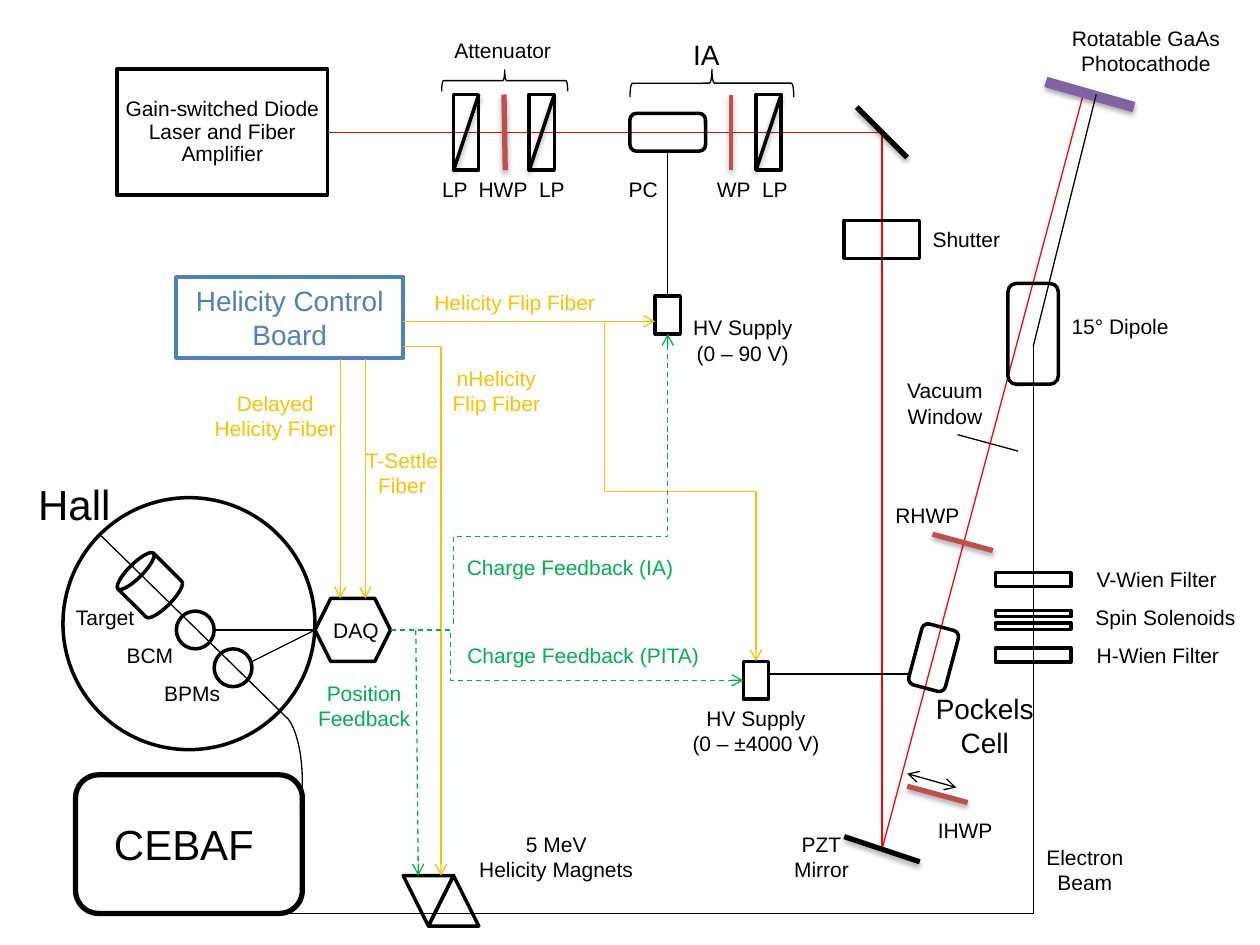
from dataclasses import dataclass

import pptx
import pptx.dml.color
import pptx.enum.dml
import pptx.enum.shapes
import pptx.enum.text
import pptx.oxml
import pptx.oxml.ns
import pptx.util
from pptx.oxml.ns import qn

SHAPE = pptx.enum.shapes.MSO_SHAPE
CONNECTOR = pptx.enum.shapes.MSO_CONNECTOR
UNIT = pptx.util.Cm(2.54)  # one drawing unit; the layout sits on a grid of 0.1


@dataclass(frozen=True)
class Theme:
    font: str = "Arial"
    black: str = "000000"
    laser: str = "FF0000"
    fiber: str = "FFC000"
    feedback: str = "00B050"
    plate: str = "C0504D"
    cathode: str = "8064A2"
    board: str = "4F81BD"
    small: int = 12
    medium: int = 16
    large: int = 24
    thin: float = 0.75
    thick: float = 2
    heavy: float = 3


T = Theme()


def units(*values):
    return [round(v * UNIT) for v in values]


def rgb(color):
    return pptx.dml.color.RGBColor.from_string(color)


def add_xml(parent, xml):
    parent.append(pptx.oxml.parse_xml(xml.replace(">", f" {pptx.oxml.ns.nsdecls('a')}>", 1)))


def set_text(tf, text, size=T.small, color=T.black):
    tf.text = text
    for p in tf.paragraphs:
        p.alignment = pptx.enum.text.PP_ALIGN.CENTER
        p.font.name, p.font.size = T.font, pptx.util.Pt(size)
        p.font.color.rgb = rgb(color)


def add_label(s, text, x, y, width, size=T.small, color=T.black):
    height = 0.1 + (text.count("\n") + 1) * size / 60
    tf = s.shapes.add_textbox(*units(x, y, width, height)).text_frame
    tf.word_wrap = False
    tf.auto_size = pptx.enum.text.MSO_AUTO_SIZE.SHAPE_TO_FIT_TEXT
    set_text(tf, text, size, color)
    return tf


def add_label_row(s, words, x, y, width, stops):
    """Label neighbouring parts in one line, set apart by tab stops."""
    p = add_label(s, "\t".join(words), x, y, width).paragraphs[0]
    p.alignment = pptx.enum.text.PP_ALIGN.LEFT
    tabs = "".join(f'<a:tab pos="{pos}" algn="l"/>' for pos in units(*stops))
    pPr = p._p.get_or_add_pPr()
    add_xml(pPr, f"<a:tabLst>{tabs}</a:tabLst>")
    pPr.insert(0, pPr[-1])


def add_outline(s, kind, x, y, width, height, rotation=0, weight=T.thick, color=T.black):
    sp = s.shapes.add_shape(kind, *units(x, y, width, height))
    sp.shadow.inherit = False
    sp.fill.background()
    sp.line.color.rgb, sp.line.width = rgb(color), pptx.util.Pt(weight)
    sp.rotation = rotation
    return sp


def style_connector(c, color, weight, dashed=False, head=False, tail=False, shadow=False):
    c.line.color.rgb, c.line.width = rgb(color), pptx.util.Pt(weight)
    if dashed:
        c.line.dash_style = pptx.enum.dml.MSO_LINE.DASH
    ln = c.line._get_or_add_ln()
    for name, wanted in (("headEnd", head), ("tailEnd", tail)):
        if wanted:
            add_xml(ln, f'<a:{name} type="arrow"></a:{name}>')
    effect = ('<a:outerShdw blurRad="40000" dist="23000" dir="5400000" rotWithShape="0">'
              '<a:srgbClr val="000000"><a:alpha val="35000"/></a:srgbClr></a:outerShdw>'
              if shadow else "")
    add_xml(c._element.spPr, f"<a:effectLst>{effect}</a:effectLst>")


def add_line(s, x1, y1, x2, y2, color=T.black, weight=T.thin, **style):
    c = s.shapes.add_connector(CONNECTOR.STRAIGHT, *units(x1, y1, x2, y2))
    style_connector(c, color, weight, **style)
    return c


def add_elbow(s, x1, y1, x2, y2, bend, color, upright=False, **style):
    """Three-part arrow; an upright one leaves vertically, so it is a turned level one."""
    turn = 0
    if upright:
        turn = -1 if y2 > y1 else 1
        cx, cy = (x1 + x2) / 2, (y1 + y2) / 2
        dx, dy = turn * (y1 - cy), -turn * (x1 - cx)
        x1, y1, x2, y2 = cx + dx, cy + dy, cx - dx, cy - dy
    c = s.shapes.add_connector(CONNECTOR.ELBOW, *units(x1, y1, x2, y2))
    spPr = c._element.spPr
    if turn:
        spPr.find(qn("a:xfrm")).set("rot", str(turn * 5400000 % 21600000))
    add_xml(spPr.find(qn("a:prstGeom")).find(qn("a:avLst")),
            f'<a:gd name="adj1" fmla="val {round(bend * 100000)}"></a:gd>')
    style_connector(c, color, T.thin, tail=True, **style)


def draw_laser_path(s):
    source = add_outline(s, SHAPE.RECTANGLE, 0.93, 0.55, 1.67, 1)
    tf = source.text_frame
    tf.word_wrap = True
    tf.margin_left = tf.margin_right = tf.margin_top = tf.margin_bottom = units(0.05)[0]
    set_text(tf, "Gain-switched Diode Laser and Fiber Amplifier")
    tf.paragraphs[0].line_spacing = 0.9
    add_line(s, 2.6, 1.05, 7, 1.05, T.laser).begin_connect(source, 3)
    add_line(s, 7, 1.05, 7, 6.74, T.laser)
    add_line(s, 7, 6.74, 8.6, 0.74, T.laser)

    for x in (3.6, 4.2, 6):  # linear polarizers
        add_outline(s, SHAPE.RECTANGLE, x, 0.75, 0.2, 0.6)
        add_line(s, x + 0.2, 0.75, x, 1.35, weight=T.thick, shadow=True)
    for x, y, width, height in ((3.92, 0.14, 0.17, 1), (5.54, 0.01, 0.22, 1.3)):
        add_outline(s, SHAPE.LEFT_BRACE, x, y, width, height, 90, T.thin)
    add_label_row(s, ("LP", "HWP", "LP"), 3.41, 1.35, 1.19, (0.29, 0.77))
    add_label_row(s, ("PC", "WP", "LP"), 4.89, 1.35, 1.48, (0.7, 1.06))

    add_outline(s, SHAPE.RECTANGLE, 6.85, 1.6, 0.3, 0.6, 270)  # shutter
    add_outline(s, SHAPE.ROUNDED_RECTANGLE, 7.26, 4.97, 0.3, 0.5, 15)  # Pockels cell
    for ends in ((6.8, 0.85, 7.2, 1.25), (6.7, 6.64, 7.3, 6.84)):  # mirrors
        add_line(s, *ends, weight=T.heavy, shadow=True)
    for *ends, weight in ((4, 0.75, 4.01, 1.35, T.heavy), (5.8, 0.75, 5.8, 1.35, T.thick),
                          (7.2, 6.24, 7.68, 6.37, T.heavy), (7.4, 4.24, 7.88, 4.37, T.heavy)):
        add_line(s, *ends, T.plate, weight, shadow=True)
    add_line(s, 7.2, 6.14, 7.59, 6.25, head=True, tail=True)
    add_line(s, 7.6, 3.45, 8.08, 3.58)  # vacuum window
    add_line(s, 8.3, 0.65, 9, 0.85, T.cathode, 2 * T.heavy, shadow=True)


def draw_electron_beam(s):
    for ends in ((8.2, 2.75, 8.7, 0.75), (8.2, 2.74, 8.2, 7.25), (2.2, 7.25, 8.2, 7.25)):
        add_line(s, *ends)
    add_outline(s, SHAPE.ROUNDED_RECTANGLE, 8, 2.25, 0.4, 0.8)  # dipole
    for y, height in ((4.6, 0.11), (4.87, 0.05), (4.97, 0.05), (5.2, 0.11)):
        add_outline(s, SHAPE.RECTANGLE, 7.9, y - height / 2, 0.6, height)
    magnet = add_outline(s, SHAPE.ISOSCELES_TRIANGLE, 3.2, 6.95, 0.4, 0.4)
    magnet._element.spPr.find(qn("a:xfrm")).set("flipV", "1")
    add_outline(s, SHAPE.ISOSCELES_TRIANGLE, 3.4, 6.95, 0.4, 0.4)


def draw_hall(s):
    add_outline(s, SHAPE.ROUNDED_RECTANGLE, 0.6, 6.15, 1.8, 1.1, weight=T.heavy)
    arc = add_outline(s, SHAPE.ARC, 2, 5.65, 0.4, 1.1, weight=T.thin)
    arc.adjustments[0], arc.adjustments[1] = 167.4, 29.95
    for x, y, size in ((0.5, 3.95, 2), (1.4, 4.85, 0.3), (1.7, 5.15, 0.3)):
        add_outline(s, SHAPE.OVAL, x, y, size, size)
    target = add_outline(s, SHAPE.CAN, 0.99, 4.43, 0.4, 0.43, 315)
    target.adjustments[0] = 0.28
    add_outline(s, SHAPE.HEXAGON, 2.5, 4.75, 0.6, 0.5)  # DAQ
    for ends in ((2.28, 5.7, 0.79, 4.24), (2, 5.25, 2.5, 5), (1.7, 5, 2.5, 5)):
        add_line(s, *ends)


def draw_controls(s):
    board = add_outline(s, SHAPE.RECTANGLE, 1.4, 2.2, 1.8, 0.64, weight=2.25, color=T.board)
    board.text_frame.word_wrap = True
    set_text(board.text_frame, "Helicity Control Board", T.medium, T.board)
    cell = add_outline(s, SHAPE.ROUNDED_RECTANGLE, 5, 0.9, 0.6, 0.3)
    supply = add_outline(s, SHAPE.RECTANGLE, 5.2, 2.35, 0.2, 0.3)
    add_outline(s, SHAPE.RECTANGLE, 5.9, 5.25, 0.2, 0.3)
    wire = add_line(s, 5.3, 1.2, 5.3, 2.35)
    wire.begin_connect(cell, 2)
    wire.end_connect(supply, 0)
    add_line(s, 6.1, 5.35, 7.21, 5.35)

    add_line(s, 3.2, 2.75, 3.5, 2.75, T.fiber)
    for ends in ((2.7, 2.85, 2.7, 4.75), (2.9, 2.85, 2.9, 4.75),
                 (3.2, 2.55, 5.2, 2.55), (3.5, 2.75, 3.5, 6.95)):
        add_line(s, *ends, T.fiber, tail=True)
    add_elbow(s, 4.8, 2.55, 6, 5.25, 0.5, T.fiber, upright=True)
    add_line(s, 3.3, 5, 3.32, 6.95, T.feedback, dashed=True, tail=True)
    add_elbow(s, 3.1, 5, 5.9, 5.4, 0.17, T.feedback, dashed=True)
    add_elbow(s, 3.6, 4.95, 5.3, 2.65, 0.3, T.feedback, upright=True, dashed=True)


def draw_labels(s):
    groups = {
        (T.small, T.black): (
            ("Attenuator", 3.5, 0.25, 0.98), ("Shutter", 7.3, 1.75, 0.74),
            ("Rotatable GaAs\nPhotocathode", 8.4, 0.15, 1.39),
            ("Vacuum\nWindow", 7.1, 2.95, 0.8), ("15° Dipole", 8.4, 2.44, 0.98),
            ("PZT\nMirror", 6.2, 6.55, 0.64), ("IHWP", 7.34, 6.44, 0.64),
            ("RHWP", 7, 3.94, 0.72), ("HV Supply\n(0 – ±4000 V)", 5.39, 5.55, 1.22),
            ("HV Supply\n(0 – 90 V)", 5.4, 2.45, 0.99), ("Electron\nBeam", 8.2, 6.65, 0.82),
            ("Target", 0.5, 4.75, 0.67), ("BCM", 0.9, 5.05, 0.58), ("BPMs", 1.2, 5.35, 0.65),
            ("5 MeV\nHelicity Magnets", 3.7, 6.55, 1.43), ("DAQ", 2.54, 4.85, 0.57),
            ("V-Wien Filter", 8.6, 4.45, 1.16), ("Spin Solenoids", 8.5, 4.75, 1.5),
            ("H-Wien Filter", 8.6, 5.05, 1.18)),
        (T.small, T.fiber): (
            ("Delayed\nHelicity Fiber", 1.6, 3.05, 1.17), ("T-Settle\nFiber", 2.8, 3.5, 0.78),
            ("Helicity Flip Fiber", 3.34, 2.25, 1.49), ("nHelicity\nFlip Fiber", 3.49, 2.85, 0.9)),
        (T.small, T.feedback): (
            ("Charge Feedback (PITA)", 3.6, 5.05, 2.06), ("Charge Feedback (IA)", 3.6, 4.35, 1.85),
            ("Position\nFeedback", 2.42, 5.35, 0.94)),
        (T.medium, T.black): (("IA", 5.4, 0.25, 0.41), ("Pockels\nCell", 7.29, 5.44, 1.05)),
        (T.large, T.black): (("CEBAF", 0.8, 6.45, 1.32), ("Hall", 0.2, 3.75, 0.78)),
    }
    for (size, color), labels in groups.items():
        for text, x, y, width in labels:
            add_label(s, text, x, y, width, size, color)


def main():
    prs = pptx.Presentation()
    prs.slide_width, prs.slide_height = pptx.util.Cm(25.4), pptx.util.Cm(19.05)
    s = prs.slides.add_slide(prs.slide_layouts[6])
    for draw in (draw_laser_path, draw_electron_beam, draw_hall, draw_controls, draw_labels):
        draw(s)
    prs.save("out.pptx")


if __name__ == "__main__":
    main()
